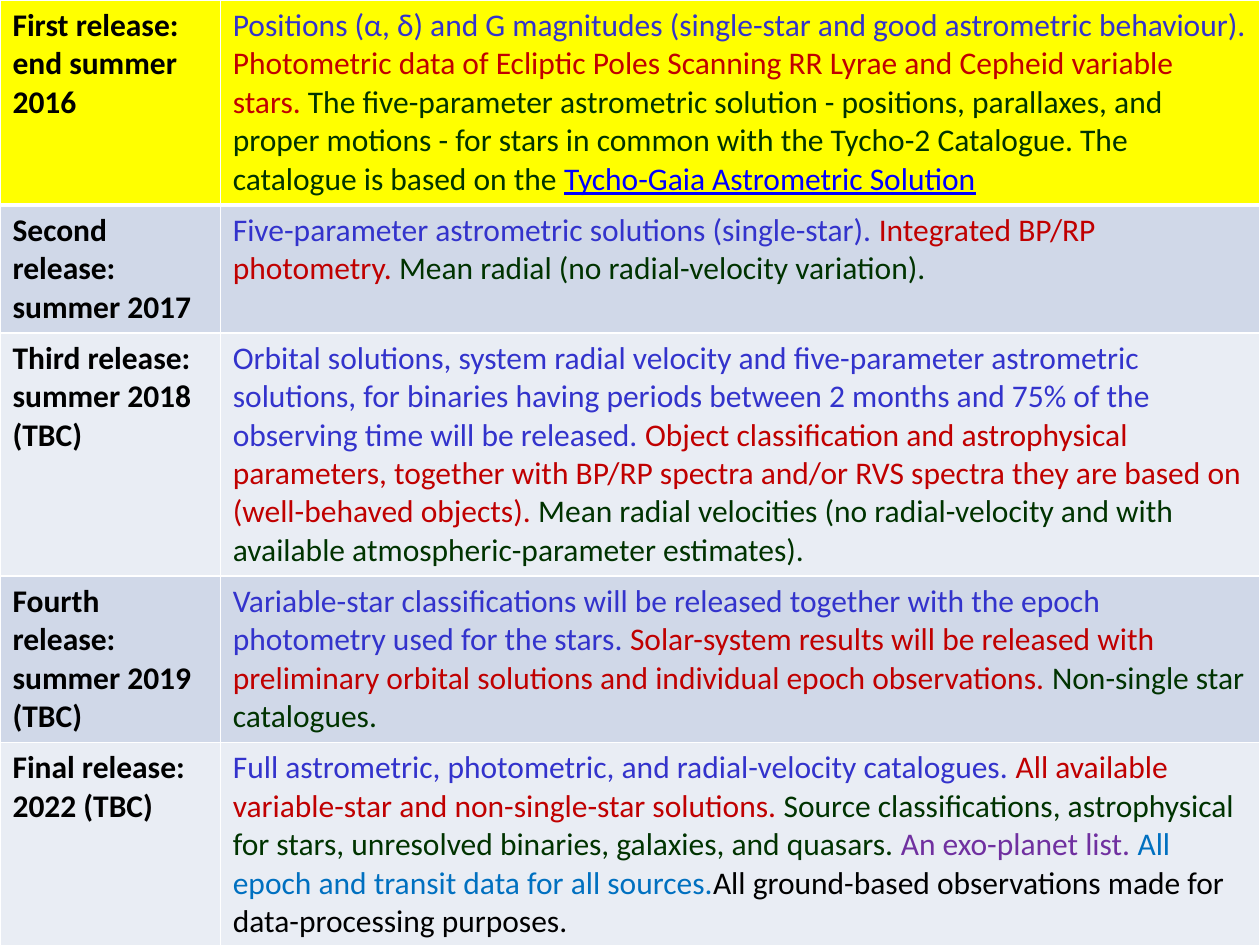
import pptx
import pptx.dml.color
import pptx.oxml
import pptx.oxml.ns
import pptx.util

BLUE, RED, GREEN = "3333CC", "C00000", "003300"
PURPLE, SKY, LINK, BLACK, WHITE = "7030A0", "0070C0", "0000FF", "000000", "FFFFFF"
YELLOW, BAND_DARK, BAND_LIGHT = "FFFF00", "D0D8E8", "E9EDF4"

COLUMN_WIDTHS = [4.44, 20.96]  # cm

# Each release: date, row height in cm, fill, contents as (text, colour)
RELEASES = [
    ("First release: end summer 2016", 4.12, YELLOW, [
        ("Positions (α, δ) and G magnitudes (single-star and good astrometric behaviour). ", BLUE),
        ("Photometric data of Ecliptic Poles Scanning RR Lyrae and Cepheid variable stars. ", RED),
        ("The five-parameter astrometric solution - positions, parallaxes, and proper motions - "
         "for stars in common with the Tycho-2 Catalogue. The catalogue is based on the ", GREEN),
        ("Tycho-Gaia Astrometric Solution", LINK)]),
    ("Second release: summer 2017", 2.56, BAND_DARK, [
        ("Five-parameter astrometric solutions (single-star). ", BLUE),
        ("Integrated BP/RP photometry. ", RED),
        ("Mean radial (no radial-velocity variation).", GREEN)]),
    ("Third release: summer 2018 (TBC)", 4.88, BAND_LIGHT, [
        ("Orbital solutions, system radial velocity and five-parameter astrometric solutions, for "
         "binaries having periods between 2 months and 75% of the observing time will be "
         "released. ", BLUE),
        ("Object classification and astrophysical parameters, together with BP/RP spectra and/or "
         "RVS spectra they are based on (well-behaved objects). ", RED),
        ("Mean radial velocities (no radial-velocity and with available atmospheric-parameter "
         "estimates).", GREEN)]),
    ("Fourth release: summer 2019 (TBC)", 3.33, BAND_DARK, [
        ("Variable-star classifications will be released together with the epoch photometry used "
         "for the stars. ", BLUE),
        ("Solar-system results will be released with preliminary orbital solutions and individual "
         "epoch observations. ", RED),
        ("Non-single star catalogues.", GREEN)]),
    ("Final release: 2022 (TBC)", 4.11, BAND_LIGHT, [
        ("Full astrometric, photometric, and radial-velocity catalogues. ", BLUE),
        ("All available variable-star and non-single-star solutions. ", RED),
        ("Source classifications, astrophysical for stars, unresolved binaries, galaxies, and "
         "quasars. ", GREEN),
        ("An exo-planet list. ", PURPLE),
        ("All epoch and transit data for all sources.", SKY),
        ("All ground-based observations made for data-processing purposes.", BLACK)]),
]


def color(hex_value):
    return pptx.dml.color.RGBColor.from_string(hex_value)


class SlideBuilder:
    font_format = {"name": "Calibri", "size": pptx.util.Pt(18)}

    def __init__(self, slide):
        self.slide = slide

    def run(self, paragraph, text, hex_value, **extra):
        piece = paragraph.add_run()
        piece.text = text
        for name, value in {**self.font_format, **extra}.items():
            setattr(piece.font, name, value)
        piece.font.color.rgb = color(hex_value)

    def borders(self, cell, bottom):
        properties = cell._tc.get_or_add_tcPr()
        for side, points in {"L": 1, "R": 1, "T": 1, "B": bottom}.items():
            properties.append(pptx.oxml.parse_xml(
                f'<a:ln{side} {pptx.oxml.ns.nsdecls("a")} w="{pptx.util.Pt(points)}">'
                f'<a:solidFill><a:srgbClr val="{WHITE}"/></a:solidFill></a:ln{side}>'))

    def cell(self, cell, fill, bottom, pieces, bold):
        self.borders(cell, bottom)
        cell.fill.solid()
        cell.fill.fore_color.rgb = color(fill)
        for text, hex_value in pieces:
            self.run(cell.text_frame.paragraphs[0], text, hex_value,
                     bold=bold, underline=hex_value == LINK)

    def release_table(self, releases, widths):
        height = sum(release[1] for release in releases)
        schedule = self.slide.shapes.add_table(
            len(releases), len(widths), 0, 0,
            pptx.util.Cm(sum(widths)), pptx.util.Cm(height)).table
        for column, width in zip(schedule.columns, widths):
            column.width = pptx.util.Cm(width)
        for index, (date, row_height, fill, contents) in enumerate(releases):
            schedule.rows[index].height = pptx.util.Cm(row_height)
            bottom = 3 if index == 0 else 1
            self.cell(schedule.cell(index, 0), fill, bottom, [(date, BLACK)], True)
            self.cell(schedule.cell(index, 1), fill, bottom, contents, False)


def main():
    deck = pptx.Presentation()
    deck.slide_width, deck.slide_height = pptx.util.Cm(25.4), pptx.util.Cm(19.05)
    # The slide has no title, so it uses the blank layout
    builder = SlideBuilder(deck.slides.add_slide(deck.slide_layouts[6]))
    # Release schedule
    builder.release_table(RELEASES, COLUMN_WIDTHS)
    deck.save("out.pptx")


if __name__ == "__main__":
    main()
